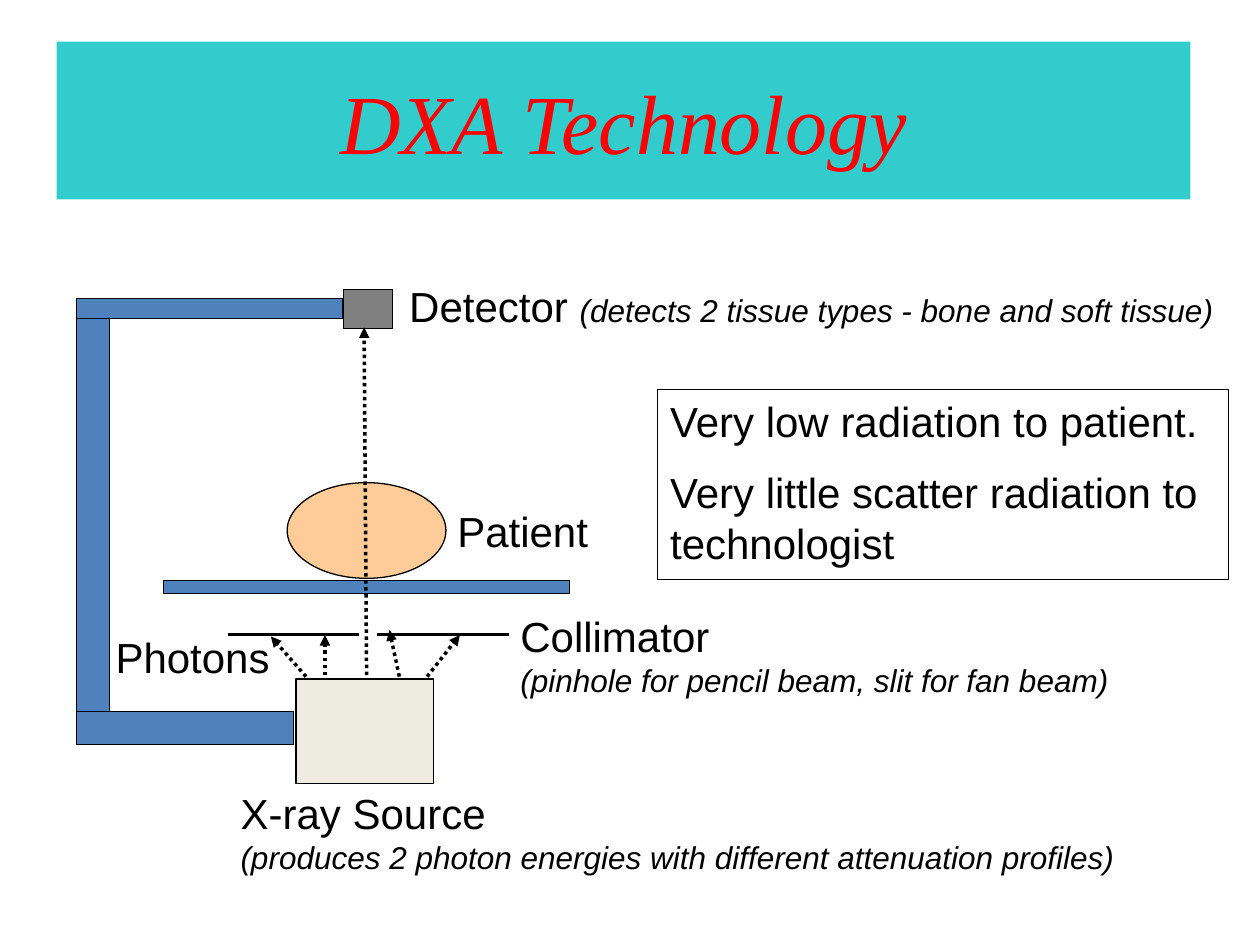
from lxml.etree import SubElement
from pptx import Presentation
from pptx.dml.color import RGBColor
from pptx.enum.dml import MSO_LINE_DASH_STYLE as Dash
from pptx.enum.shapes import MSO_CONNECTOR as Connector, MSO_SHAPE as Shape
from pptx.enum.text import MSO_ANCHOR as Anchor, PP_ALIGN as Align
from pptx.oxml.ns import qn
from pptx.util import Cm, Pt

COLORS = {
    "banner": "33CCCC", "title": "FF0000", "ink": "000000", "frame": "4F81BD",
    "source": "EEECE1", "patient": "FFCC99", "detector": "808080",
}


def color(name):
    """Return the named palette colour."""
    return RGBColor.from_string(COLORS[name])


def add_block(slide, kind, box, fill=None, outlined=True):
    """Add a flat preset shape with an optional fill and thin outline."""
    shape = slide.shapes.add_shape(kind, *map(Cm, box))
    shape.shadow.inherit = False
    if fill:
        shape.fill.solid()
        shape.fill.fore_color.rgb = color(fill)
    else:
        shape.fill.background()
    if outlined:
        shape.line.color.rgb = color("ink")
        shape.line.width = Pt(0.75)
    else:
        shape.line.fill.background()
    return shape


def add_line(slide, start, end, photon=False):
    """Add a solid line, or a dotted arrow for a photon."""
    connector = slide.shapes.add_connector(Connector.STRAIGHT, *map(Cm, start + end))
    connector.line.color.rgb = color("ink")
    connector.line.width = Pt(2)
    if photon:
        connector.line.dash_style = Dash.ROUND_DOT
        SubElement(connector.line._get_or_add_ln(), qn("a:tailEnd"), type="triangle")
    SubElement(connector._element.spPr, qn("a:effectLst"))


def style_font(font, size, name="Arial", ink="ink", italic=False):
    """Set the size, typeface, colour and slant of a font."""
    font.size = Pt(size)
    font.name = name
    font.color.rgb = color(ink)
    font.italic = italic


def add_label(slide, box, term, detail=None, stacked=False):
    """Add a term with an optional smaller italic detail after or below it."""
    frame = slide.shapes.add_textbox(*map(Cm, box)).text_frame
    frame.word_wrap = True
    paragraph = frame.paragraphs[0]
    style_font(paragraph.font, 24)
    term_run = paragraph.add_run()
    term_run.text = term
    style_font(term_run.font, 24)
    if detail:
        if stacked:
            paragraph.add_line_break()
        detail_run = paragraph.add_run()
        detail_run.text = detail
        style_font(detail_run.font, 18, italic=True)


def draw_title(slide, box):
    """Draw the title banner."""
    banner = add_block(slide, Shape.RECTANGLE, box, "banner", outlined=False)
    frame = banner.text_frame
    frame.vertical_anchor = Anchor.MIDDLE
    paragraph = frame.paragraphs[0]
    paragraph.text = "DXA Technology"
    paragraph.alignment = Align.CENTER
    style_font(paragraph.font, 48, "Times New Roman", "title", italic=True)


def draw_scanner(slide, left, top):
    """Draw the scanner, its photon beams and its labels."""
    def at(x, y, *size):
        return (left + x, top + y, *size)

    parts = [
        (Shape.RECTANGLE, (4.42, 7.85, 2.77, 2.11), "source"),
        (Shape.RECTANGLE, (1.75, 5.87, 8.18, 0.25), "frame"),
        (Shape.OVAL, (4.24, 3.89, 3.2, 1.93), "patient"),
        (Shape.RECTANGLE, (5.38, 0, 0.99, 0.79), "detector"),
        (Shape.RECTANGLE, (0, 8.51, 4.37, 0.66), "frame"),
        (Shape.RECTANGLE, (0, 0.58, 0.66, 7.93), "frame"),
        (Shape.RECTANGLE, (0, 0.18, 5.36, 0.4), "frame"),
    ]
    for kind, box, fill in parts:
        add_block(slide, kind, at(*box), fill)

    for start, end in [(3.05, 5.69), (6.05, 8.71)]:
        add_line(slide, at(start, 6.95), at(end, 6.95))

    photons = [
        ((6.5, 7.8), (6.3, 6.86)),
        ((5, 7.77), (5, 6.96)),
        ((5.84, 7.77), (5.79, 0.76)),
        ((7.06, 7.8), (7.72, 6.96)),
        ((4.62, 7.8), (3.91, 6.99)),
    ]
    for start, end in photons:
        add_line(slide, at(*start), at(*end), photon=True)

    add_label(slide, at(3.05, 9.91, 18.54, 2.03), "X-ray Source",
              "(produces 2 photon energies with different attenuation profiles)", stacked=True)
    add_label(slide, at(0.53, 6.76, 3.76, 1.27), "Photons")
    add_label(slide, at(8.69, 6.35, 13.46, 2.03), "Collimator",
              "(pinhole for pencil beam, slit for fan beam)", stacked=True)
    add_label(slide, at(7.42, 4.22, 3.53, 1.27), "Patient")
    add_label(slide, at(6.45, -0.3, 17.4, 1.27), "Detector ",
              "(detects 2 tissue types - bone and soft tissue)")


def draw_safety_note(slide, box):
    """Draw the outlined note on radiation exposure."""
    frame = add_block(slide, Shape.RECTANGLE, box).text_frame
    frame.word_wrap = True
    frame.vertical_anchor = Anchor.TOP
    frame.text = "Very low radiation to patient.\nVery little scatter radiation to technologist"
    for paragraph in frame.paragraphs:
        paragraph.alignment = Align.LEFT
        style_font(paragraph.font, 24)
    frame.paragraphs[1].space_before = Pt(12)


def main():
    """Build and save the presentation."""
    presentation = Presentation()
    presentation.slide_width = Cm(25.4)
    presentation.slide_height = Cm(19.05)
    slide = presentation.slides.add_slide(presentation.slide_layouts[6])
    draw_title(slide, (1.14, 0.84, 22.86, 3.18))
    draw_scanner(slide, 1.55, 5.84)
    draw_safety_note(slide, (13.26, 7.85, 11.51, 3.84))
    presentation.save("out.pptx")


if __name__ == "__main__":
    main()
